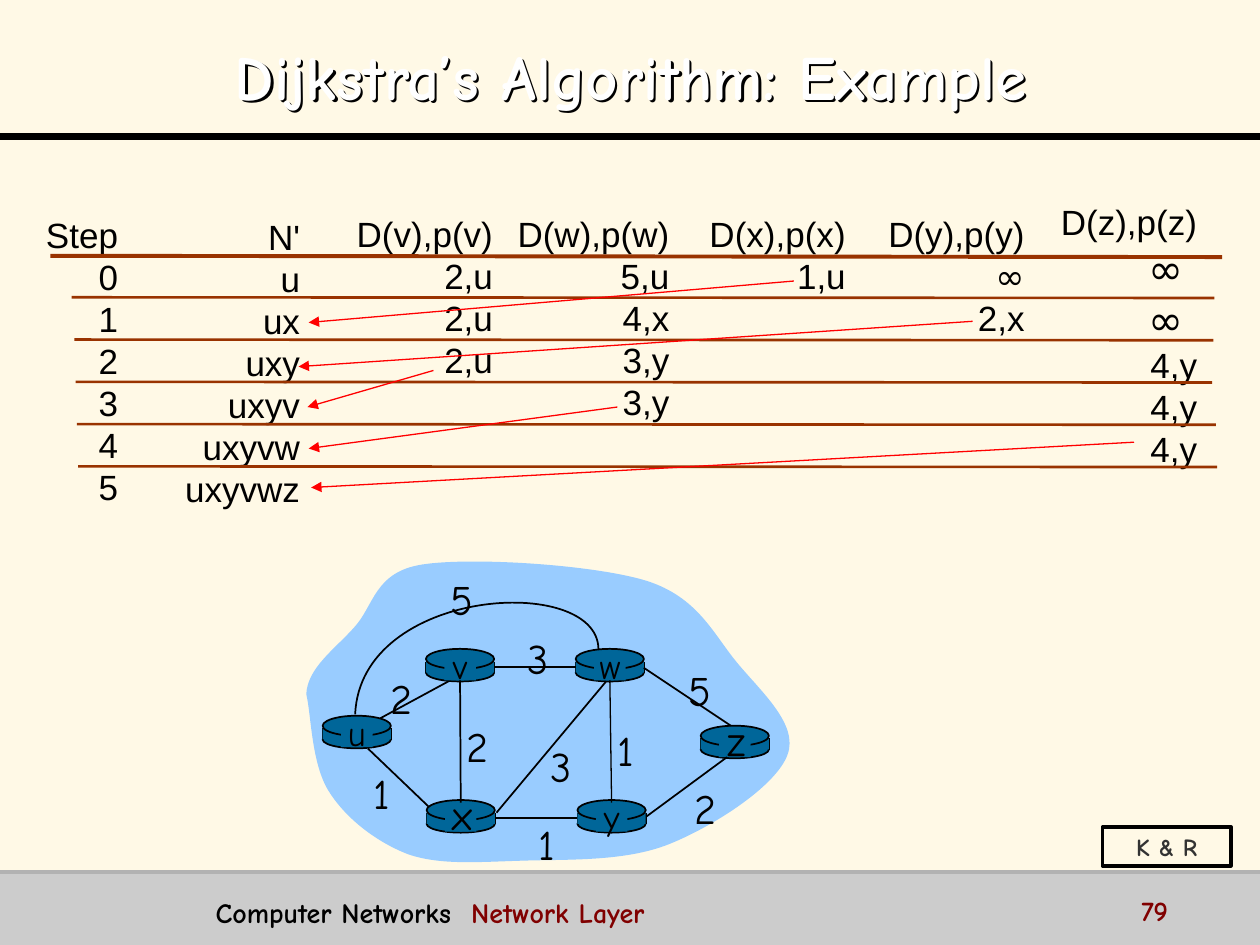
"""Build a slide that traces Dijkstra's algorithm with a step table and a network graph."""
from dataclasses import dataclass

import pptx
import pptx.dml.color
import pptx.enum.shapes
import pptx.enum.text
import pptx.oxml
import pptx.oxml.ns
import pptx.util

Pt = pptx.util.Pt
Align = pptx.enum.text.PP_ALIGN
Preset = pptx.enum.shapes.MSO_SHAPE
Point = tuple[float, float]

COLORS = {
    "paper": "FFF9E6", "bar": "CCCCCC", "bar_edge": "B2B2B2", "white": "FFFFFF",
    "black": "000000", "maroon": "800000", "grey": "333333", "rule": "993300",
    "arrow": "FF0000", "cloud": "99CCFF", "router": "006699",
}
ARIAL, COMIC = "Arial", "Comic Neue"
ROW = 24


@dataclass
class Column:
    left: float
    top: float
    width: float
    cells: list[str]
    infinity_size: int = 20


@dataclass
class Router:
    name: str
    x: float
    y: float
    size: int = 20


@dataclass
class Stroke:
    start: Point
    end: Point
    color: str = "black"
    width: float = 1
    arrow: bool = False


@dataclass
class Weight:
    value: str
    left: float
    top: float


COLUMNS = [
    Column(19, 118.5, 55.6, ["Step", "0", "1", "2", "3", "4", "5"]),
    Column(98.6, 119.5, 80, ["N'", "u", "ux", "uxy", "uxyv", "uxyvw", "uxyvwz"]),
    Column(196.6, 118, 92.2, ["D(v),p(v)", "2,u", "2,u", "2,u"]),
    Column(287.7, 118, 102, ["D(w),p(w)", "5,u", "4,x", "3,y", "3,y"]),
    Column(398.2, 118, 92.2, ["D(x),p(x)", "1,u"]),
    Column(500.4, 118, 92.2, ["D(y),p(y)", "∞", "2,x"]),
    Column(599, 111.2, 92.2, ["D(z),p(z)", "∞ ", "∞ ", "4,y", "4,y", "4,y"], 24),
]
RULE_ENDS = [(41, 694), (42.5, 693.4), (43.2, 692.6), (43.9, 694.8), (44.6, 695.5)]
PICKS = [
    ((453.6, 160.6), (176.4, 184.3)), ((555.8, 183.6), (170.6, 209.5)),
    ((247.7, 211.7), (175.7, 232.6)), ((352.8, 232.6), (176.4, 256.3)),
    ((648, 252.7), (177.8, 278.6)),
]
CLOUD = [
    (175, 396.7), (175.7, 381.6), (191.5, 370.8), (202.3, 358.6),
    (213.8, 346.3), (213.8, 326.9), (241.2, 322.6),
    (269.3, 318.2), (339.1, 322.6), (369.4, 331.9),
    (398.9, 341.3), (407.5, 362.2), (421.2, 378.7),
    (434.9, 395.3), (456.5, 414), (450, 431.3),
    (443.5, 449.3), (407.5, 472.3), (382.3, 482.4),
    (357.1, 492.5), (324, 491), (299.5, 491.8),
    (274.3, 492.5), (252, 494.6), (233.3, 488.2),
    (214.6, 481), (197.3, 467.3), (187.9, 452.2),
    (177.8, 436.3), (177.8, 407.5), (175, 396.7),
]
U_W_ARC = [(342, 370.8), (341.3, 327.6), (205.9, 335.5), (203, 408.2)]
ROUTERS = [
    Router("u", 184.4, 409), Router("x", 243.8, 457.2, 24), Router("v", 243.4, 370.8),
    Router("w", 329, 370.8), Router("y", 330, 457.2), Router("z", 400.4, 414.7, 24),
]
U_V_EDGE = Stroke((217.4, 410.4), (259.9, 387.4))
EDGES = [
    Stroke((283.7, 464.4), (346.3, 389.5)), Stroke((369.4, 466.6), (415.4, 432.7)),
    Stroke((244.8, 460.8), (210.2, 427.7)), Stroke((417.6, 414.7), (367.9, 381.6)),
]
WEIGHTS = [
    Weight("2", 216, 380.9), Weight("2", 259.2, 408.2), Weight("1", 205.4, 434.9),
    Weight("3", 307.4, 419.8), Weight("1", 299.8, 464.4), Weight("1", 345.1, 410.4),
    Weight("2", 389.5, 443.5), Weight("5", 386.1, 376.4), Weight("3", 294.5, 357.8),
    Weight("5", 250.6, 324),
]


def rgb(name: str) -> pptx.dml.color.RGBColor:
    """Return a named colour."""
    return pptx.dml.color.RGBColor.from_string(COLORS[name])


def style(span, size: float, face: str, color: str = "black", bold: bool = False) -> None:
    """Format one run."""
    span.font.size, span.font.name, span.font.bold = Pt(size), face, bold
    span.font.color.rgb = rgb(color)


def add_text(page, text: str, left: float, top: float, width: float, height: float,
             size: float, face: str = COMIC, color: str = "black", bold: bool = False,
             align=Align.CENTER, wrap: bool = False):
    """Add a text box whose paragraphs share one format."""
    box = page.shapes.add_textbox(Pt(left), Pt(top), Pt(width), Pt(height))
    box.text_frame.text = text
    box.text_frame.word_wrap = wrap
    if not wrap:
        box.text_frame.auto_size = pptx.enum.text.MSO_AUTO_SIZE.SHAPE_TO_FIT_TEXT
    for para in box.text_frame.paragraphs:
        para.alignment = align
        for span in para.runs:
            style(span, size, face, color, bold)
    return box


def paint(shape, fill: str | None, line: str | None = None, width: float = 1) -> None:
    """Set fill and outline, and remove the shadow."""
    shape.shadow.inherit = False
    if fill:
        shape.fill.solid()
        shape.fill.fore_color.rgb = rgb(fill)
    else:
        shape.fill.background()
    if line:
        shape.line.color.rgb, shape.line.width = rgb(line), Pt(width)
    else:
        shape.line.fill.background()


def add_block(page, preset, left: float, top: float, width: float, height: float,
              fill: str | None, line: str | None = None, line_width: float = 1):
    """Add a painted preset shape."""
    block = page.shapes.add_shape(preset, Pt(left), Pt(top), Pt(width), Pt(height))
    paint(block, fill, line, line_width)
    return block


def add_stroke(page, stroke: Stroke):
    """Add a straight connector, with an arrowhead if wanted."""
    ends = [Pt(value) for value in (*stroke.start, *stroke.end)]
    line = page.shapes.add_connector(pptx.enum.shapes.MSO_CONNECTOR.STRAIGHT, *ends)
    line.line.color.rgb, line.line.width = rgb(stroke.color), Pt(stroke.width)
    if stroke.arrow:
        head = pptx.oxml.parse_xml(f'<a:tailEnd {pptx.oxml.ns.nsdecls("a")} type="triangle"/>')
        line.line._get_or_add_ln().append(head)
    line._element.spPr.append(pptx.oxml.parse_xml(f'<a:effectLst {pptx.oxml.ns.nsdecls("a")}/>'))
    return line


def add_curve(page, knots: list[Point], fill: str | None, line: str | None) -> None:
    """Draw a chain of cubic curves through every third knot."""
    points = [(Pt(x), Pt(y)) for x, y in knots]
    builder = page.shapes.build_freeform(*points[0])
    builder.add_line_segments(points[1:], close=fill is not None)
    shape = builder.convert_to_shape()
    segments = list(shape._element.iter(pptx.oxml.ns.qn("a:lnTo")))
    for first in range(0, len(segments), 3):
        curve = pptx.oxml.parse_xml(f'<a:cubicBezTo {pptx.oxml.ns.nsdecls("a")}/>')
        segments[first].addprevious(curve)
        for segment in segments[first:first + 3]:
            curve.append(segment[0])
            segment.getparent().remove(segment)
    paint(shape, fill, line)


def add_column(page, column: Column) -> None:
    """Add one right-aligned column of the step table."""
    box = add_text(page, "\n".join(column.cells), column.left, column.top, column.width,
                   len(column.cells) * ROW + 7.2, 20, ARIAL, align=Align.RIGHT)
    for para in box.text_frame.paragraphs:
        para.line_spacing = Pt(ROW)
        if "∞" in para.text:
            style(para.runs[0], column.infinity_size, COMIC)
            para.line_spacing = Pt(ROW * column.infinity_size / 20)


def add_router(page, router: Router):
    """Draw a labelled router and return its band and label plate."""
    x, y, width = router.x, router.y, 39
    add_block(page, Preset.OVAL, x, y + 8.6, width, 10, "router", "black")
    for side in (x, x + width):
        add_stroke(page, Stroke((side, y + 7.2), (side, y + 13.6)))
    band = add_block(page, Preset.RECTANGLE, x, y + 7.2, width, 6.4, "router")
    add_block(page, Preset.OVAL, x, y, width, 11.5, "router", "black")
    plate = add_block(page, Preset.RECTANGLE, x + 10.5, y + 1.5, 18, 16.5, "router")
    large = router.size > 20
    height = router.size * 1.15 + 7.2
    add_text(page, router.name, x + (7.7 if large else 6.5), y + (7.5 if large else 9) - height / 2,
             26, height, router.size)
    return band, plate


def join(page, begin, begin_site: int, end, end_site: int, width: float = 1) -> None:
    """Connect the sides of two rectangles."""
    line = add_stroke(page, Stroke((0, 0), (1, 1), width=width))
    line.begin_connect(begin, begin_site)
    line.end_connect(end, end_site)


def add_frame(page) -> None:
    """Add the title, the footer and the source label."""
    add_block(page, Preset.RECTANGLE, 0, 498.2, 720, 41.8, "bar")
    add_stroke(page, Stroke((0, 77.8), (720, 77.8), "black", 4))
    add_stroke(page, Stroke((0, 498.2), (720, 498.2), "bar_edge", 2))
    title = add_text(page, "Dijkstra’s Algorithm: Example", 14.4, 9.4, 692, 62.6, 36,
                     color="white", bold=True, wrap=True)
    title.text_frame.vertical_anchor = pptx.enum.text.MSO_ANCHOR.MIDDLE
    title.text_frame.paragraphs[0].line_spacing = 1.1
    title._element.spPr.append(pptx.oxml.parse_xml(
        f'<a:effectLst {pptx.oxml.ns.nsdecls("a")}><a:outerShdw dist="{Pt(1.8)}" dir="2700000">'
        f'<a:srgbClr val="{COLORS["black"]}"/></a:outerShdw></a:effectLst>'))
    footer = add_text(page, "Computer Networks\t", 116.2, 508.3, 518, 22.3, 16, bold=True,
                      align=Align.LEFT, wrap=True)
    para = footer.text_frame.paragraphs[0]
    para._p.get_or_add_pPr().append(pptx.oxml.parse_xml(
        f'<a:tabLst {pptx.oxml.ns.nsdecls("a")}><a:tab pos="{Pt(146)}" algn="l"/></a:tabLst>'))
    span = para.add_run()
    span.text = "Network Layer"
    style(span, 16, COMIC, "maroon", True)
    add_text(page, "79", 645.1, 506.9, 72, 18, 16, color="maroon", bold=True,
             align=Align.LEFT, wrap=True)
    label = add_block(page, Preset.RECTANGLE, 630, 472.5, 73.4, 22.3, None, "black", 2)
    label.text_frame.text = "K & R"
    label.text_frame.word_wrap = False
    label.text_frame.vertical_anchor = pptx.enum.text.MSO_ANCHOR.MIDDLE
    label.text_frame.paragraphs[0].alignment = Align.CENTER
    style(label.text_frame.paragraphs[0].runs[0], 14, COMIC, "grey", True)


def add_graph(page) -> None:
    """Draw the network with its routers, links and weights."""
    add_curve(page, CLOUD, "cloud", None)
    add_stroke(page, U_V_EDGE)
    parts = {router.name: add_router(page, router) for router in ROUTERS}
    for edge in EDGES:
        add_stroke(page, edge)
    for left, right in ("vw", "xy"):
        join(page, parts[left][0], 3, parts[right][0], 1)
    for upper, lower, width in (("v", "x", 1), ("w", "y", 0.75)):
        join(page, parts[upper][1], 2, parts[lower][1], 0, width)
    add_curve(page, U_W_ARC, None, "black")
    for weight in WEIGHTS:
        add_text(page, weight.value, weight.left, weight.top, 25.2, 28.8, 24)


def main() -> None:
    """Build and save the deck."""
    deck = pptx.Presentation()
    deck.slide_width, deck.slide_height = Pt(720), Pt(540)
    page = deck.slides.add_slide(deck.slide_layouts[6])
    page.background.fill.solid()
    page.background.fill.fore_color.rgb = rgb("paper")
    add_frame(page)
    for column in COLUMNS:
        add_column(page, column)
    add_stroke(page, Stroke((28.8, 146.2), (698.4, 146.9), "rule", 2.25))
    for row, (left, right) in enumerate(RULE_ENDS):
        y = 169.9 + 24.15 * row
        add_stroke(page, Stroke((left, y), (right, y + 0.4), "rule", 1.5))
    add_graph(page)
    for start, end in PICKS:
        add_stroke(page, Stroke(start, end, "arrow", 0.75, True))
    deck.save("out.pptx")


if __name__ == "__main__":
    main()
